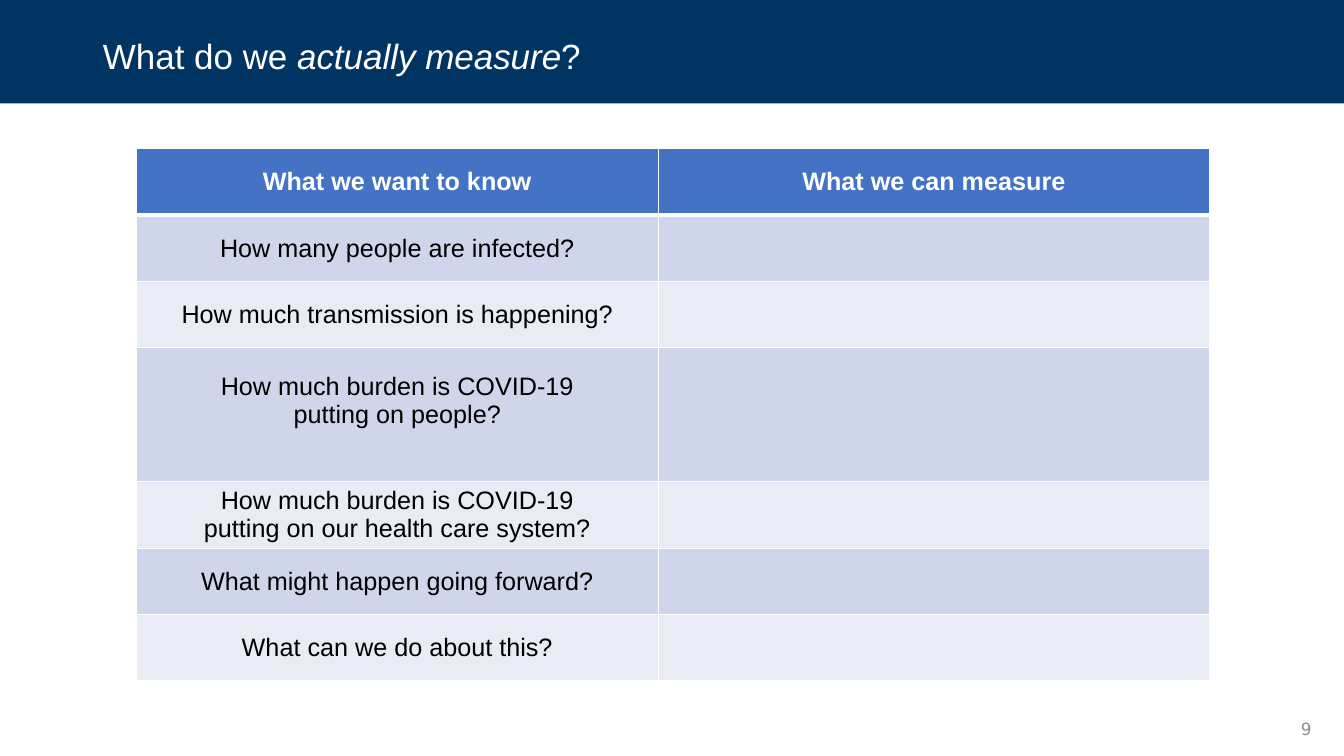
from lxml import etree
from pptx import Presentation
from pptx.dml.color import RGBColor
from pptx.enum.shapes import MSO_SHAPE
from pptx.enum.text import MSO_ANCHOR, MSO_AUTO_SIZE, PP_ALIGN
from pptx.oxml.ns import qn
from pptx.util import Cm, Pt

RECTANGLE = MSO_SHAPE.RECTANGLE
MIDDLE = MSO_ANCHOR.MIDDLE
NO_AUTOFIT = MSO_AUTO_SIZE.NONE
LEFT, CENTER, RIGHT = PP_ALIGN.LEFT, PP_ALIGN.CENTER, PP_ALIGN.RIGHT

TITLE = [("What do we ", False), ("actually measure", True), ("?", False)]
PAGE = "9"
HEADINGS = ["What we want to know", "What we can measure"]
QUESTIONS = [
    ["How many people are infected?"],
    ["How much transmission is happening?"],
    ["How much burden is COVID-19", "putting on people?"],
    ["How much burden is COVID-19", "putting on our health care system?"],
    ["What might happen going forward?"],
    ["What can we do about this?"],
]
TALL_ROW = 3
COLUMN_WIDTHS = [13.16, 13.89]
ROW_HEIGHT, TALL_HEIGHT = 1.67, 3.38
NAVY, BLUE, WHITE, BLACK, GREY = "003462", "4472C4", "FFFFFF", "000000", "8C8C8C"
BANDS = ["CFD5EA", "E9EBF5"]


def color(value):
    return RGBColor.from_string(value)


def add_text(paragraph, text, size=18, font="Arial", fill=BLACK,
             bold=False, italic=False, align=CENTER):
    paragraph.alignment = align
    run = paragraph.add_run()
    run.text = text
    run.font.size = Pt(size)
    run.font.name = font
    run.font.bold = bold
    run.font.italic = italic
    run.font.color.rgb = color(fill)


def style_cell(cell, fill, bottom_width):
    cell.vertical_anchor = MIDDLE
    cell.fill.solid()
    cell.fill.fore_color.rgb = color(fill)
    properties = cell._tc.get_or_add_tcPr()
    for position, side in enumerate(["lnL", "lnR", "lnT", "lnB"]):
        width = bottom_width if side == "lnB" else 1
        border = etree.Element(qn(f"a:{side}"), w=str(Pt(width)))
        solid = etree.SubElement(border, qn("a:solidFill"))
        etree.SubElement(solid, qn("a:srgbClr"), val=WHITE)
        properties.insert(position, border)


def add_header(slide, width):
    title = slide.shapes.title
    title.left, title.top, title.width, title.height = Cm(2.34), Cm(1.02), Cm(29.21), Cm(0.89)
    frame = title.text_frame
    frame.auto_size = NO_AUTOFIT
    frame.vertical_anchor = MIDDLE
    frame.paragraphs[0].line_spacing = 0.9
    for text, italic in TITLE:
        add_text(frame.paragraphs[0], text, size=25, fill=WHITE, italic=italic, align=LEFT)
    banner = slide.shapes.add_shape(RECTANGLE, 0, 0, width, Cm(2.61))
    banner.shadow.inherit = False
    banner.fill.solid()
    banner.fill.fore_color.rgb = color(NAVY)
    banner.line.fill.background()
    title._element.addprevious(banner._element)


def add_questions(slide):
    rows = [[[heading] for heading in HEADINGS]] + [[lines, []] for lines in QUESTIONS]
    heights = [TALL_HEIGHT if row == TALL_ROW else ROW_HEIGHT for row in range(len(rows))]
    table = slide.shapes.add_table(len(rows), len(HEADINGS), Cm(3.43), Cm(3.75),
                                   Cm(sum(COLUMN_WIDTHS)), Cm(sum(heights))).table
    for column, width in zip(table.columns, COLUMN_WIDTHS):
        column.width = Cm(width)
    for index, (row, height) in enumerate(zip(rows, heights)):
        table.rows[index].height = Cm(height)
        heading = index == 0
        for column, lines in enumerate(row):
            cell = table.cell(index, column)
            style_cell(cell, BLUE if heading else BANDS[(index - 1) % 2], 3 if heading else 1)
            if index == TALL_ROW:
                cell.margin_bottom = Cm(0.85)
            frame = cell.text_frame
            for number, line in enumerate(lines):
                paragraph = frame.add_paragraph() if number else frame.paragraphs[0]
                add_text(paragraph, line, fill=WHITE if heading else BLACK, bold=heading)


def add_page_number(slide):
    frame = slide.shapes.add_textbox(Cm(25.4), Cm(17.98), Cm(7.9), Cm(0.76)).text_frame
    frame.word_wrap = True
    frame.vertical_anchor = MIDDLE
    add_text(frame.paragraphs[0], PAGE, size=12, font="DejaVu Sans", fill=GREY, align=RIGHT)


def main():
    deck = Presentation()
    deck.slide_width, deck.slide_height = Cm(33.87), Cm(19.05)
    slide = deck.slides.add_slide(deck.slide_layouts[5])
    add_header(slide, deck.slide_width)
    add_questions(slide)
    add_page_number(slide)
    deck.save("out.pptx")


if __name__ == "__main__":
    main()
